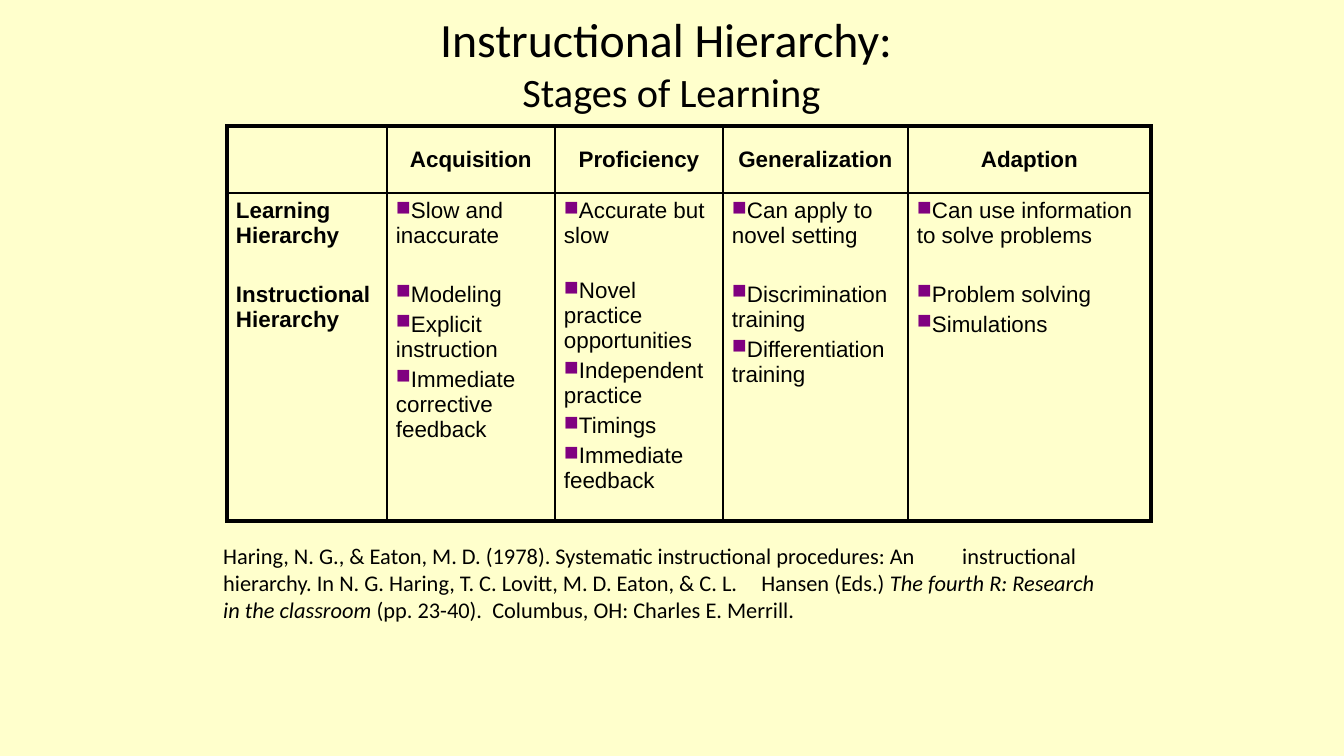
import lxml.etree
import pptx
import pptx.dml.color
import pptx.enum.text
import pptx.oxml.ns
import pptx.util

PX = 914400 / 134.4
CREAM = pptx.dml.color.RGBColor(0xFF, 0xFF, 0xCC)
BLACK = pptx.dml.color.RGBColor(0, 0, 0)
PURPLE = pptx.dml.color.RGBColor(0x80, 0, 0x80)
CENTER = pptx.enum.text.PP_ALIGN.CENTER
MIDDLE = pptx.enum.text.MSO_ANCHOR.MIDDLE

HEADERS = ["", "Acquisition", "Proficiency", "Generalization", "Adaption"]
COLUMN_WIDTHS = [160, 168, 168, 185, 243]
ROW_HEIGHTS = [67, 328]
STAGES = [
    ["Learning Hierarchy", "Instructional Hierarchy"],
    ["Slow and inaccurate", "Modeling", "Explicit instruction",
     "Immediate corrective feedback"],
    ["Accurate but slow", "Novel practice opportunities",
     "Independent practice", "Timings", "Immediate feedback"],
    ["Can apply to novel setting", "Discrimination training",
     "Differentiation training"],
    ["Can use information to solve problems", "Problem solving", "Simulations"],
]
SECTION_GAPS = [18, 18, 16, 18, 18]
REFERENCE = [
    ("Haring, N. G., & Eaton, M. D. (1978). Systematic instructional procedures: "
     "An \tinstructional hierarchy. In N. G. Haring, T. C. Lovitt, M. D. Eaton, "
     "& C. L. \tHansen (Eds.) ", False),
    ("The fourth R: Research in the classroom ", True),
    ("(pp. 23-40). \tColumbus, OH: Charles E. Merrill.", False),
]


def px(n):
    return round(n * PX)


def sub(parent, tag, **attrs):
    return lxml.etree.SubElement(parent, pptx.oxml.ns.qn(tag), attrs)


class Deck:
    def __init__(self, width, height):
        self.prs = pptx.Presentation()
        self.prs.slide_width = px(width)
        self.prs.slide_height = px(height)
        self.s = self.prs.slides.add_slide(self.prs.slide_layouts[6])
        fill = self.s.background.fill
        fill.solid()
        fill.fore_color.rgb = CREAM

    def style(self, font, name, size, bold=False):
        font.name = name
        font.size = pptx.util.Pt(size)
        font.bold = bold
        font.color.rgb = BLACK

    def box(self, x, y, w, h):
        tf = self.s.shapes.add_textbox(px(x), px(y), px(w), px(h)).text_frame
        tf.word_wrap = True
        return tf

    def title(self, x, y, w, h, lines):
        tf = self.box(x, y, w, h)
        tf.vertical_anchor = MIDDLE
        p = tf.paragraphs[0]
        p.alignment = CENTER
        for i, (text, size) in enumerate(lines):
            if i:
                p.add_line_break()
            r = p.add_run()
            r.text = text
            self.style(r.font, "Calibri", size)

    def reference(self, x, y, w, h, runs, tabs):
        p = self.box(x, y, w, h).paragraphs[0]
        tab_list = sub(p._p.get_or_add_pPr(), "a:tabLst")
        for tab in tabs:
            sub(tab_list, "a:tab", pos=str(px(tab)), algn="l")
        self.style(p.font, "Calibri", 12)
        for text, italic in runs:
            r = p.add_run()
            r.text = text
            r.font.italic = italic

    def table(self, x, y, widths, heights):
        frame = self.s.shapes.add_table(len(heights), len(widths), px(x), px(y),
                                        px(sum(widths)), px(sum(heights)))
        table = frame.table
        table.first_row = table.horz_banding = False
        for column, width in zip(table.columns, widths):
            column.width = px(width)
        for row, height in zip(table.rows, heights):
            row.height = px(height)
        for i in range(len(heights)):
            for j in range(len(widths)):
                cell = table.cell(i, j)
                cell.margin_left = cell.margin_right = px(9)
                cell.margin_top = cell.margin_bottom = px(5)
                self.borders(cell, j == 0, j == len(widths) - 1,
                             i == 0, i == len(heights) - 1)
                cell.fill.background()
        return table

    def borders(self, cell, left, right, top, bottom):
        tcPr = cell._tc.get_or_add_tcPr()
        for side, outer in zip("LRTB", (left, right, top, bottom)):
            width = pptx.util.Pt(2.25 if outer else 1)
            line = sub(tcPr, f"a:ln{side}", w=str(int(width)))
            sub(sub(line, "a:solidFill"), "a:srgbClr", val=str(BLACK))

    def bullet(self, p):
        pPr = p._p.get_or_add_pPr()
        pPr.set("marL", "0")
        pPr.set("indent", "0")
        sub(sub(pPr, "a:buClr"), "a:srgbClr", val=str(PURPLE))
        sub(pPr, "a:buSzPct", val="90000")
        sub(pPr, "a:buChar", char="■")

    def header(self, cell, text):
        cell.vertical_anchor = MIDDLE
        p = cell.text_frame.paragraphs[0]
        p.text = text
        p.alignment = CENTER
        self.style(p.font, "Arial", 12, bold=True)

    def entries(self, cell, items, section_gap, label):
        tf = cell.text_frame
        for i, text in enumerate(items):
            p = tf.add_paragraph() if i else tf.paragraphs[0]
            p.text = text
            if not label:
                self.bullet(p)
            if i:
                p.space_before = pptx.util.Pt(section_gap if i == 1 else 2.6)
            self.style(p.font, "Arial", 12, bold=label)


def main():
    deck = Deck(1344, 756)
    deck.title(218, 0, 907, 126,
               [("Instructional Hierarchy: ", 25.6), ("Stages of Learning", 21.6)])
    table = deck.table(227, 126, COLUMN_WIDTHS, ROW_HEIGHTS)
    for j, (name, items, gap) in enumerate(zip(HEADERS, STAGES, SECTION_GAPS)):
        if name:
            deck.header(table.cell(0, j), name)
        deck.entries(table.cell(1, j), items, gap, label=j == 0)
    deck.reference(210, 536, 907, 95, REFERENCE, tabs=[269, 538, 739])
    deck.prs.save("out.pptx")


if __name__ == "__main__":
    main()
